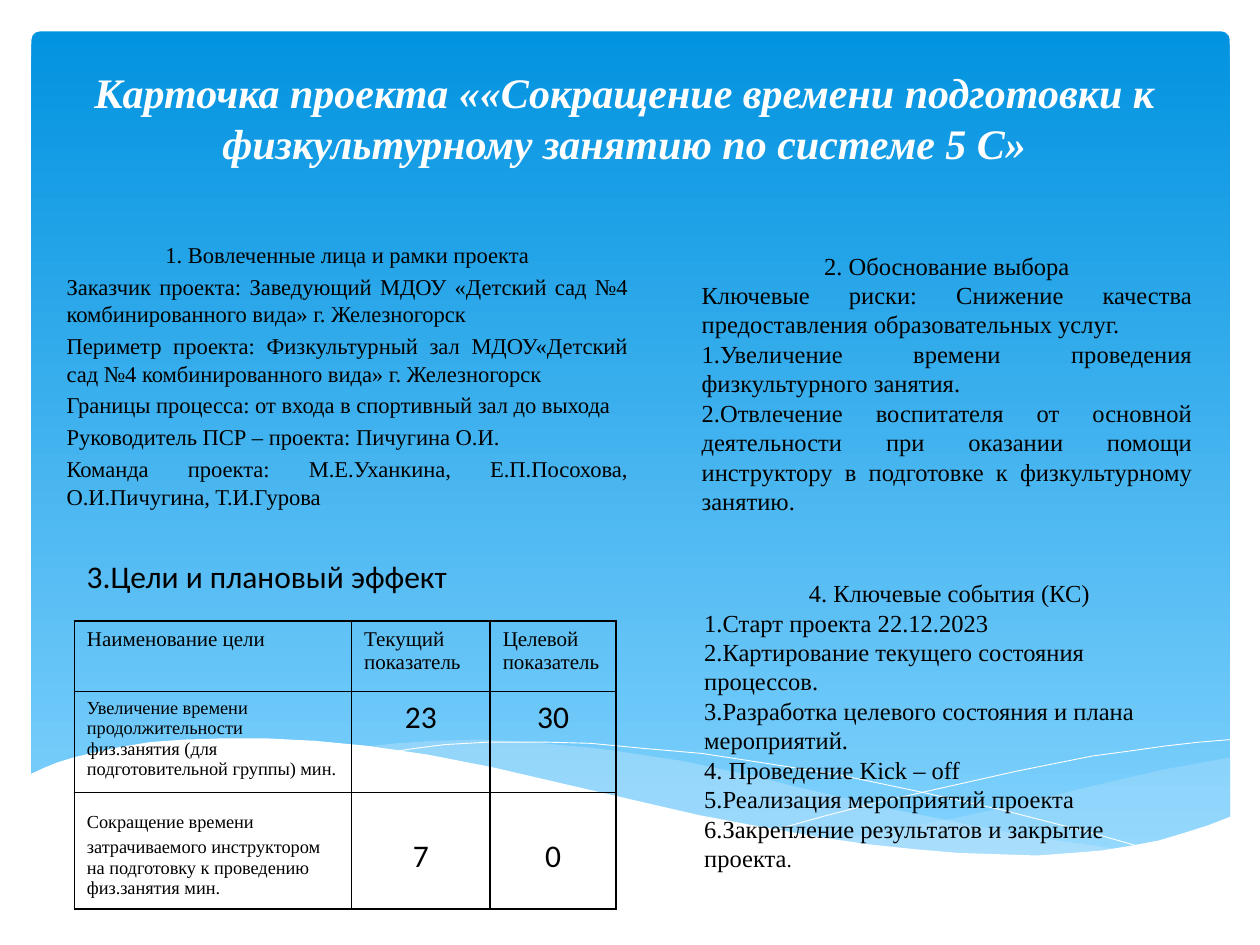
"""Builds the project card slide: people, reasons, goals and key events."""
from lxml import etree
from pptx import Presentation
from pptx.dml.color import RGBColor
from pptx.enum.shapes import MSO_SHAPE
from pptx.enum.text import MSO_ANCHOR, MSO_AUTO_SIZE, PP_ALIGN
from pptx.oxml.ns import qn
from pptx.util import Inches, Pt

LEFT, CENTER, JUSTIFY = PP_ALIGN.LEFT, PP_ALIGN.CENTER, PP_ALIGN.JUSTIFY
TOP, MIDDLE, BOTTOM = MSO_ANCHOR.TOP, MSO_ANCHOR.MIDDLE, MSO_ANCHOR.BOTTOM
WHITE = RGBColor(0xFF, 0xFF, 0xFF)
BLACK = RGBColor(0, 0, 0)
SKY_TOP = RGBColor(0x02, 0x93, 0xE0)
SKY_BOTTOM = RGBColor(0x83, 0xD3, 0xFE)
MIST = RGBColor(0xC6, 0xE7, 0xFC)
SERIF, SANS = "Times New Roman", "Calibri"


def write(frame, *paragraphs, size=14, font=SERIF, color=BLACK, align=LEFT, first_align=None,
          bold=False, italic=False, pitch=None, gap=0, anchor=TOP):
    """Fill a text frame; a paragraph is a string or a list of (text, size, font)."""
    frame.word_wrap = True
    frame.vertical_anchor = anchor
    for index, content in enumerate(paragraphs):
        paragraph = frame.paragraphs[0] if index == 0 else frame.add_paragraph()
        paragraph.alignment = first_align if index == 0 and first_align else align
        paragraph.space_before = Pt(gap)
        if pitch:
            paragraph.line_spacing = Pt(pitch)
        pieces = [(content, size, font)] if isinstance(content, str) else content
        for text, piece_size, piece_font in pieces:
            run = paragraph.add_run()
            run.text = text
            run.font.size, run.font.name = Pt(piece_size), piece_font
            run.font.bold, run.font.italic = bold, italic
            run.font.color.rgb = color


def draw_wave(points, fill=None, opacity=100):
    """Draw a closed filled wave, or an open white hairline without a fill."""
    corners = [(Inches(x), Inches(y)) for x, y in points]
    builder = slide.shapes.build_freeform(*corners[0])
    builder.add_line_segments(corners[1:], close=fill is not None)
    wave = builder.convert_to_shape()
    wave.shadow.inherit = False
    if fill is None:
        wave.fill.background()
        wave.line.color.rgb = WHITE
        wave.line.width = Pt(0.5)
        return
    wave.line.fill.background()
    wave.fill.solid()
    wave.fill.fore_color.rgb = fill
    if opacity < 100:
        tint = wave.element.spPr.find(qn("a:solidFill"))[0]
        etree.SubElement(tint, qn("a:alpha"), val=str(opacity * 1000))


presentation = Presentation()
presentation.slide_width, presentation.slide_height = Inches(10), Inches(7.5)
slide = presentation.slides.add_slide(presentation.slide_layouts[5])

sky = slide.shapes.add_shape(MSO_SHAPE.ROUNDED_RECTANGLE,
                             Inches(0.25), Inches(0.25), Inches(9.51), Inches(6.6))
sky.adjustments[0] = 0.01
sky.shadow.inherit = False
sky.line.fill.background()
sky.fill.gradient()
sky.fill.gradient_angle = 270
for stop, color, position in zip(sky.fill.gradient_stops, (SKY_TOP, SKY_BOTTOM), (0, 1)):
    stop.color.rgb = color
    stop.position = position

draw_wave([(9.77, 6.01), (9.5, 6.06), (9.22, 6.11), (8.92, 6.18), (8.62, 6.25), (8.06, 6.39),
           (7.54, 6.5), (7.07, 6.59), (6.62, 6.67), (6.92, 6.71), (7.19, 6.74), (7.46, 6.77),
           (7.7, 6.79), (8.04, 6.8), (8.36, 6.79), (8.64, 6.77), (8.9, 6.74), (9.14, 6.69),
           (9.37, 6.63), (9.51, 6.59), (9.77, 6.49)], MIST, 29)
draw_wave([(8.94, 6.75), (8.67, 6.71), (8.38, 6.67), (8.08, 6.62), (7.76, 6.56), (7.42, 6.49),
           (7.07, 6.42), (6.69, 6.33), (6.3, 6.24), (5.99, 6.16), (5.7, 6.1), (5.42, 6.04),
           (5.15, 6), (4.89, 5.96), (4.65, 5.93), (4.42, 5.91), (4.2, 5.89), (3.8, 5.87),
           (3.45, 5.88), (3.14, 5.9), (2.87, 5.93), (3.23, 5.98), (3.63, 6.04), (4.05, 6.13),
           (4.5, 6.24), (4.91, 6.34), (5.3, 6.42), (5.67, 6.5), (6.02, 6.57), (6.35, 6.63),
           (6.66, 6.68), (6.96, 6.72), (7.23, 6.76), (7.49, 6.78), (7.86, 6.8), (8.29, 6.8),
           (8.68, 6.78)], MIST, 40)
draw_wave([(3.1, 5.97), (3.29, 5.94), (3.53, 5.91), (3.88, 5.89), (4.33, 5.89), (4.69, 5.9),
           (5.11, 5.94), (5.57, 5.98), (6.09, 6.06), (6.66, 6.15), (7.28, 6.28), (7.96, 6.43),
           (8.7, 6.62), (9.08, 6.73)])
draw_wave([(6.14, 6.59), (6.53, 6.48), (6.96, 6.37), (7.49, 6.25), (8.07, 6.12), (8.67, 6),
           (8.97, 5.96), (9.25, 5.92), (9.52, 5.89), (9.76, 5.87)])
draw_wave([(9.77, 6.48), (9.59, 6.55), (9.4, 6.61), (9.2, 6.67), (8.99, 6.71), (8.75, 6.75),
           (8.5, 6.77), (8.23, 6.79), (7.93, 6.78), (7.61, 6.77), (7.26, 6.74), (6.88, 6.7),
           (6.48, 6.64), (6.03, 6.56), (5.55, 6.47), (5.03, 6.35), (4.47, 6.22), (3.91, 6.09),
           (3.4, 5.99), (2.92, 5.92), (2.5, 5.88), (2.11, 5.86), (1.77, 5.86), (1.46, 5.87),
           (1.19, 5.89), (0.95, 5.93), (0.76, 5.97), (0.59, 6.01), (0.46, 6.05), (0.36, 6.09),
           (0.23, 6.15), (0.23, 7.31), (9.77, 7.31)], WHITE)

title = slide.shapes.title
title.element.getparent().append(title.element)
title.left, title.top, title.width, title.height = (Inches(v) for v in (0.35, 0.44, 9.21, 0.94))
title.text_frame.auto_size = MSO_AUTO_SIZE.NONE
write(title.text_frame,
      "Карточка проекта ««Сокращение времени подготовки к физкультурному занятию по системе 5 С»",
      size=24, color=WHITE, align=CENTER, bold=True, italic=True, pitch=29.1, anchor=BOTTOM)

sections = [
    ((0.43, 1.86, 4.65, 2.44),
     ["1. Вовлеченные лица и рамки проекта",
      "Заказчик проекта: Заведующий МДОУ «Детский сад №4 комбинированного вида» г. Железногорск",
      "Периметр проекта: Физкультурный зал МДОУ«Детский сад №4 комбинированного вида» "
      "г. Железногорск",
      "Границы процесса: от входа в спортивный зал до выхода",
      "Руководитель ПСР – проекта: Пичугина О.И.",
      "Команда проекта: М.Е.Уханкина, Е.П.Посохова, О.И.Пичугина, Т.И.Гурова"],
     dict(size=12.9, first_align=CENTER, align=JUSTIFY, pitch=15.7, gap=2.5)),
    ((5.47, 1.94, 4.09, 2.22),
     ["2. Обоснование выбора",
      "Ключевые риски: Снижение качества предоставления образовательных услуг.",
      "1.Увеличение времени проведения физкультурного занятия.",
      "2.Отвлечение воспитателя от основной деятельности при оказании помощи инструктору "
      "в подготовке к физкультурному занятию."],
     dict(first_align=CENTER, align=JUSTIFY, pitch=16.8)),
    ((0.59, 4.37, 4.33, 0.71), ["3.Цели и плановый эффект"], dict(size=18, font=SANS)),
    ((5.49, 4.54, 4.09, 2.46),
     ["4. Ключевые события (КС)",
      "1.Старт проекта 22.12.2023",
      "2.Картирование текущего состояния процессов.",
      "3.Разработка целевого состояния и плана мероприятий.",
      "4. Проведение Kick – off",
      "5.Реализация мероприятий проекта",
      [("6.Закрепление результатов и закрытие проекта", 14, SERIF), (".", 12, SERIF)]],
     dict(first_align=CENTER, pitch=16.8)),
]
for place, paragraphs, style in sections:
    section = slide.shapes.add_textbox(*(Inches(v) for v in place))
    write(section.text_frame, *paragraphs, **style)

goal_rows = [
    ["Наименование цели", "Текущий показатель", "Целевой показатель"],
    ["Увеличение времени продолжительности физ.занятия (для подготовительной группы) мин.",
     "23", "30"],
    [[("Сокращение времени", 10.5, SERIF), (" ", 18, SANS),
      ("затрачиваемого инструктором на подготовку к проведению физ.занятия мин.", 10.5, SERIF)],
     "7", "0"],
]
goals = slide.shapes.add_table(3, 3, Inches(0.59), Inches(4.93), Inches(4.3), Inches(2.28)).table
goals.first_row = goals.horz_banding = False
for column, width in zip(goals.columns, (2.2, 1.1, 1)):
    column.width = Inches(width)
for row, height in zip(goals.rows, (0.56, 0.8, 0.92)):
    row.height = Inches(height)
for row_index, contents in enumerate(goal_rows):
    for column_index, content in enumerate(contents):
        cell = goals.cell(row_index, column_index)
        is_value = row_index > 0 and column_index > 0
        if is_value:
            write(cell.text_frame, content, size=18, font=SANS, align=CENTER)
        else:
            write(cell.text_frame, content, size=12 if row_index == 0 else 10.5)
        if is_value and row_index == 2:
            cell.vertical_anchor = MIDDLE
            cell.margin_top = Inches(0.15)
        properties = cell._tc.get_or_add_tcPr()
        for side in ("a:lnL", "a:lnR", "a:lnT", "a:lnB"):
            border = etree.SubElement(properties, qn(side), w=str(Pt(1)))
            ink = etree.SubElement(border, qn("a:solidFill"))
            etree.SubElement(ink, qn("a:srgbClr"), val=str(BLACK))
        cell.fill.background()

presentation.save("out.pptx")
